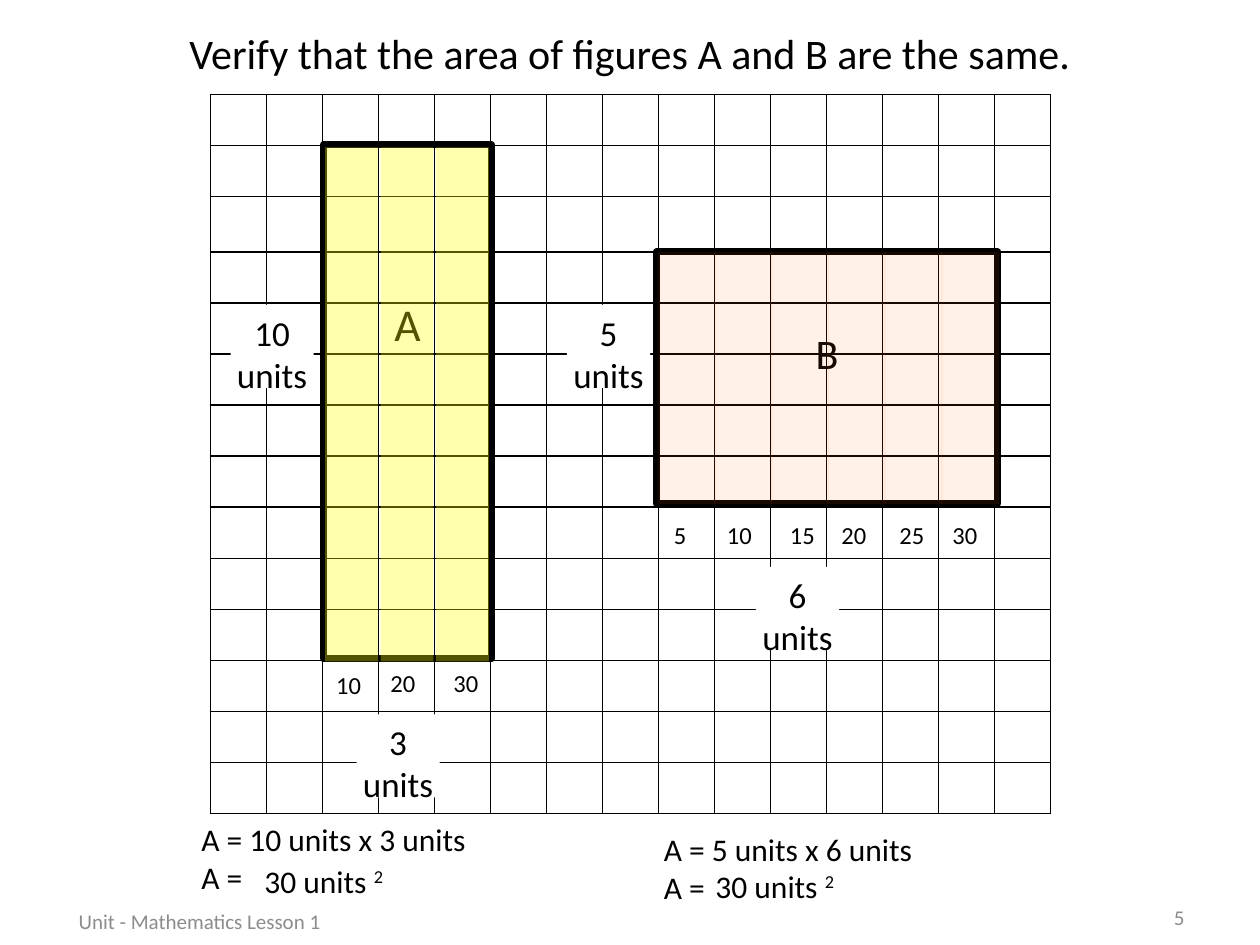
from pptx import Presentation
from pptx.dml.color import RGBColor
from pptx.enum import shapes as kinds, text as tx
from pptx.oxml import parse_xml
from pptx.oxml.ns import nsdecls, qn
from pptx.util import Inches, Pt
from lxml import etree

BLACK = RGBColor(0x00, 0x00, 0x00)
WHITE = RGBColor(0xFF, 0xFF, 0xFF)
GRAY = RGBColor(0x8C, 0x8C, 0x8C)
YELLOW = RGBColor(0xFF, 0xFF, 0x00)
ORANGE = RGBColor(0xFF, 0x66, 0x00)
LEFT, CENTER, RIGHT = tx.PP_ALIGN.LEFT, tx.PP_ALIGN.CENTER, tx.PP_ALIGN.RIGHT
TOP, MIDDLE = tx.MSO_ANCHOR.TOP, tx.MSO_ANCHOR.MIDDLE


def write(shape, lines, size=18, color=BLACK, align=LEFT, anchor=TOP, side=0.1, top=0.05, power=""):
    """Write lines into a shape, with an optional raised power at the end."""
    frame = shape.text_frame
    frame.word_wrap = True
    frame.vertical_anchor = anchor
    frame.margin_left = frame.margin_right = Inches(side)
    frame.margin_top, frame.margin_bottom = Inches(top), Inches(0.05)
    for i, line in enumerate(lines):
        para = frame.add_paragraph() if i else frame.paragraphs[0]
        para.alignment = align
        para.add_run().text = line
    if power:
        run = para.add_run()
        run.text = power
        run.font._element.set("baseline", "30000")
    for para in frame.paragraphs:
        for run in para.runs:
            run.font.name, run.font.size = "Calibri", Pt(size)
            run.font.color.rgb = color


def label(parent, box, *lines, **style):
    """Add a text box."""
    write(parent.add_textbox(*map(Inches, box)), lines, **style)


def rect(parent, box, fill=None, alpha=None, line=None):
    """Add a plain rectangle, see-through when alpha is given in percent."""
    shape = parent.add_shape(kinds.MSO_SHAPE.RECTANGLE, *map(Inches, box))
    shape.shadow.inherit = False
    if fill is None:
        shape.fill.background()
    else:
        shape.fill.solid()
        shape.fill.fore_color.rgb = fill
    if alpha:
        tint = next(shape._element.iter(qn("a:srgbClr")))
        etree.SubElement(tint, qn("a:alpha")).set("val", str(alpha * 1000))
    if line:
        shape.line.color.rgb, shape.line.width = BLACK, Pt(line)
    else:
        shape.line.fill.background()
    return shape


def edge(cell):
    """Draw thin black borders around a cell."""
    props = cell._tc.get_or_add_tcPr()
    for i, side in enumerate(("lnL", "lnR", "lnT", "lnB")):
        props.insert(i, parse_xml(
            f'<a:{side} {nsdecls("a")} w="12700"><a:solidFill>'
            f'<a:srgbClr val="{BLACK}"/></a:solidFill></a:{side}>'))


def grid(parent, box, rows, cols, tall):
    """Add the unit grid, whose third row is slightly taller."""
    table = parent.add_table(rows, cols, *map(Inches, box)).table
    table.first_row = table.horz_banding = False
    for col in table.columns:
        col.width = Inches(box[2] / cols)
    for i, row in enumerate(table.rows):
        row.height = Inches(tall if i == 2 else (box[3] - tall) / (rows - 1))
    for cell in table.iter_cells():
        cell.margin_top = cell.margin_bottom = 0
        cell.fill.solid()
        cell.fill.fore_color.rgb = WHITE
        edge(cell)


def figure(parent, box, name, size, drop):
    """Outline one figure and name it."""
    write(rect(parent, box, line=4), [name], size=size, align=CENTER, top=drop)


def units(parent, x, y, count):
    """Add a white tag with a side length."""
    tag = rect(parent, (x, y, 0.66, 0.66), WHITE)
    write(tag, [f"{count} units"], size=20, align=CENTER, side=0)


def strips(parent, box, step, fill, alpha, count, marks):
    """Tint the columns of a figure and mark the running total under each."""
    x, y, wide, high = box
    for i, (left, top) in enumerate(marks):
        group = parent.add_group_shape().shapes
        rect(group, (x + i * step, y, wide, high), fill, alpha)
        label(group, (left, top, 0.42, 0.34), str((i + 1) * count), size=14)


def area(parent, x, y, sides, gap, drop):
    """Write the area sum of one figure."""
    label(parent, (x, y, 3, 0.71), f"A = {sides[0]} units x {sides[1]} units", "A =")
    label(parent, (x + gap, y + drop, 1.75, 0.42),
          f"{sides[0] * sides[1]} units ", power="2")


def main():
    """Build the slide."""
    deck = Presentation()
    deck.slide_width, deck.slide_height = Inches(10), Inches(7.5)
    parts = deck.slides.add_slide(deck.slide_layouts[6]).shapes
    grid(parts, (1.67, 0.75, 6.67, 5.71), 14, 15, 0.44)
    figure(parts, (2.57, 1.15, 1.33, 4.08), "A", 26, 1.2)
    figure(parts, (5.21, 2, 2.71, 2), "B", 24, 0.6)
    for x, y, count in ((1.83, 2.42, 10), (2.83, 5.67, 3), (4.5, 2.42, 5), (6, 4.5, 6)):
        units(parts, x, y, count)
    strips(parts, (2.58, 1.17, 0.42, 4.08), 0.44, YELLOW, 32, 10,
           ((2.57, 5.27), (3, 5.25), (3.5, 5.25)))
    strips(parts, (5.22, 2, 0.46, 2), 0.45, ORANGE, 9, 5,
           [(x, 4.08) for x in (5.25, 5.67, 6.17, 6.58, 7.04, 7.46)])
    area(parts, 1.5, 6.46, (10, 3), 0.5, 0.33)
    area(parts, 5.17, 6.54, (5, 6), 0.41, 0.29)
    label(parts, (0.75, 0.17, 8.5, 0.5),
          "Verify that the area of figures A and B are the same.", size=24, align=CENTER)
    foot = dict(size=12, color=GRAY, anchor=MIDDLE)
    label(parts, (7.17, 7.08, 2.33, 0.4), "5", align=RIGHT, **foot)
    label(parts, (0, 7.11, 3.17, 0.4), "Unit - Mathematics Lesson 1", align=CENTER, **foot)
    deck.save("out.pptx")


if __name__ == "__main__":
    main()
